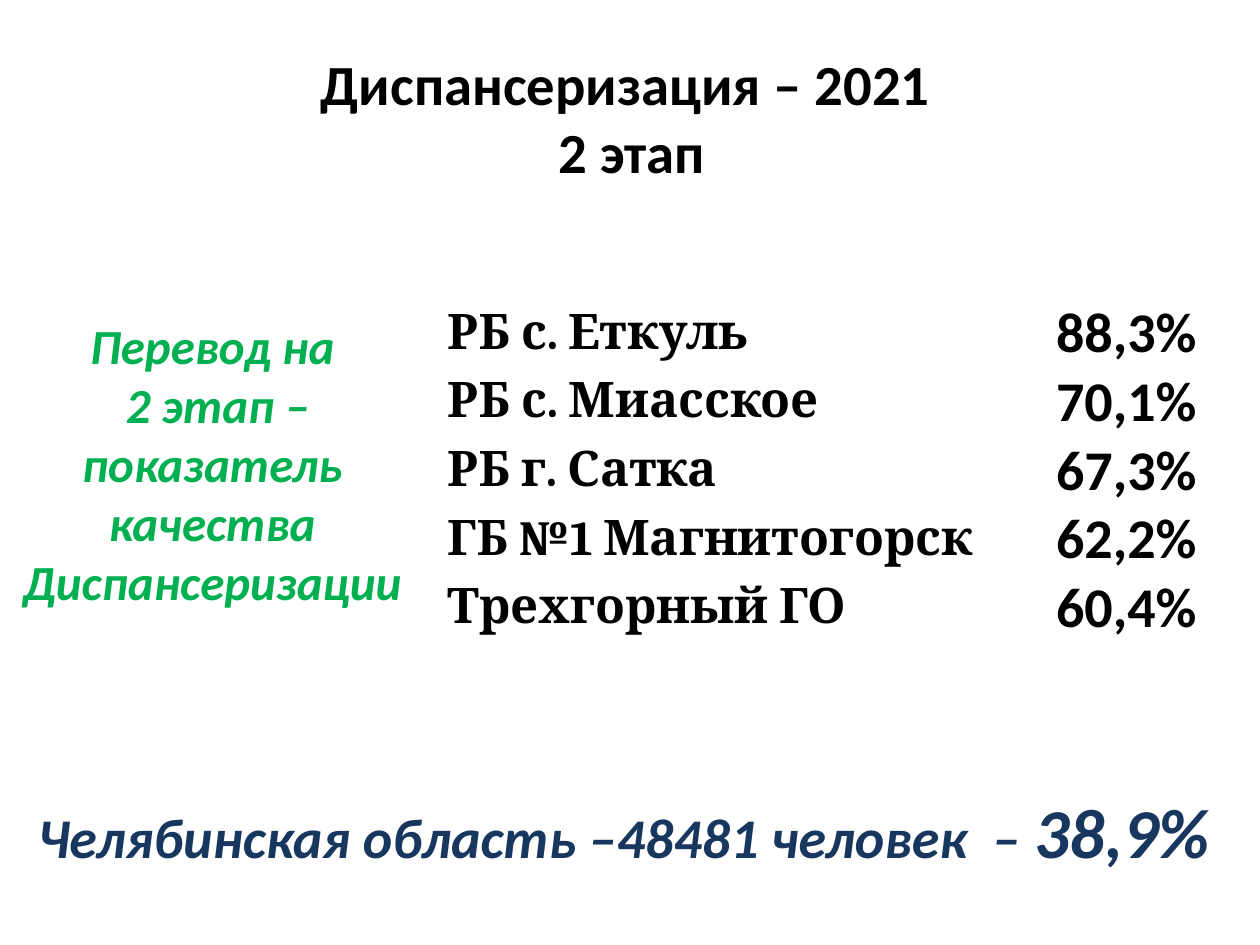
from dataclasses import dataclass

from pptx import Presentation
from pptx.dml.color import RGBColor
from pptx.enum.text import MSO_ANCHOR as Anchor, PP_ALIGN as Align
from pptx.util import Pt


@dataclass(frozen=True)
class Run:
    text: str
    size: float
    hue: str = "000000"
    face: str = "Calibri"
    slant: bool = False


@dataclass(frozen=True)
class Box:
    left: float
    top: float
    width: float
    height: float
    lines: list[list[Run]]
    align: Align = Align.CENTER
    anchor: Anchor = Anchor.MIDDLE
    space: float = 1.0


@dataclass(frozen=True)
class Clinic:
    name: str
    share: str


GREEN, NAVY = "00B050", "17375E"
BOXES = [
    Box(2.2, 21.6, 717.8, 90, [[Run("Диспансеризация – 2021 \v2 этап", 32.4)]]),
    Box(5, 145.4, 232.6, 238.3, [
        [Run("Перевод на", 28, GREEN, slant=True)],
        [Run(" 2 этап – показатель качества Диспансеризации", 28, GREEN, slant=True)],
    ]),
    Box(14.4, 439.9, 699.8, 67.7, [[
        Run("Челябинская область –48481 человек  – ", 32, NAVY, slant=True),
        Run("38,9%", 40, NAVY, slant=True),
    ]], Align.LEFT, Anchor.TOP, 1.15),
]
CLINICS = [
    Clinic("РБ с. Еткуль", "88,3%"),
    Clinic("РБ с. Миасское", "70,1%"),
    Clinic("РБ г. Сатка", "67,3%"),
    Clinic("ГБ №1 Магнитогорск", "62,2%"),
    Clinic("Трехгорный ГО", "60,4%"),
]
WIDTHS = (343.4, 90.7)
ROW = 39.2


def color(code: str) -> RGBColor:
    return RGBColor.from_string(code)


def apply(target, style: dict) -> None:
    for key, value in style.items():
        setattr(target, key, value)


def write(par, runs: list[Run], align: Align, space: float = 1.0) -> None:
    apply(par, {"alignment": align, "line_spacing": space})
    for item in runs:
        for part, text in enumerate(item.text.split("\v")):
            if part:
                par.add_line_break()
            run = par.add_run()
            run.text = text
            apply(run.font, {"name": item.face, "size": Pt(item.size),
                             "bold": True, "italic": item.slant})
            run.font.color.rgb = color(item.hue)


def draw_box(slide, box: Box) -> None:
    area = map(Pt, (box.left, box.top, box.width, box.height))
    frame = slide.shapes.add_textbox(*area).text_frame
    apply(frame, {"word_wrap": True, "vertical_anchor": box.anchor})
    for spot, runs in enumerate(box.lines):
        par = frame.add_paragraph() if spot else frame.paragraphs[0]
        write(par, runs, box.align, box.space)


def fill_cell(cell, run: Run, align: Align, anchor: Anchor) -> None:
    cell.fill.background()
    apply(cell, {"margin_left": Pt(0.7), "margin_right": Pt(0.7),
                 "margin_top": Pt(0.7), "margin_bottom": Pt(0),
                 "vertical_anchor": anchor})
    write(cell.text_frame.paragraphs[0], [run], align)


def draw_table(slide, left: float, top: float) -> None:
    count = len(CLINICS)
    area = map(Pt, (left, top, sum(WIDTHS), ROW * count))
    table = slide.shapes.add_table(count, len(WIDTHS), *area).table
    apply(table, {"first_row": False, "horz_banding": False})
    for column, width in zip(table.columns, WIDTHS):
        column.width = Pt(width)
    for row, clinic in zip(table.rows, CLINICS):
        name, share = row.cells
        fill_cell(name, Run(clinic.name, 28, face="Cambria"), Align.LEFT, Anchor.MIDDLE)
        fill_cell(share, Run(clinic.share, 32), Align.CENTER, Anchor.BOTTOM)


def main() -> None:
    """Build the slide on second-stage health screening by clinic."""
    deck = Presentation()
    apply(deck, {"slide_width": Pt(720), "slide_height": Pt(540)})
    slide = deck.slides.add_slide(deck.slide_layouts[6])
    for box in BOXES:
        draw_box(slide, box)
    draw_table(slide, 254.9, 170.6)
    deck.save("out.pptx")


if __name__ == "__main__":
    main()
